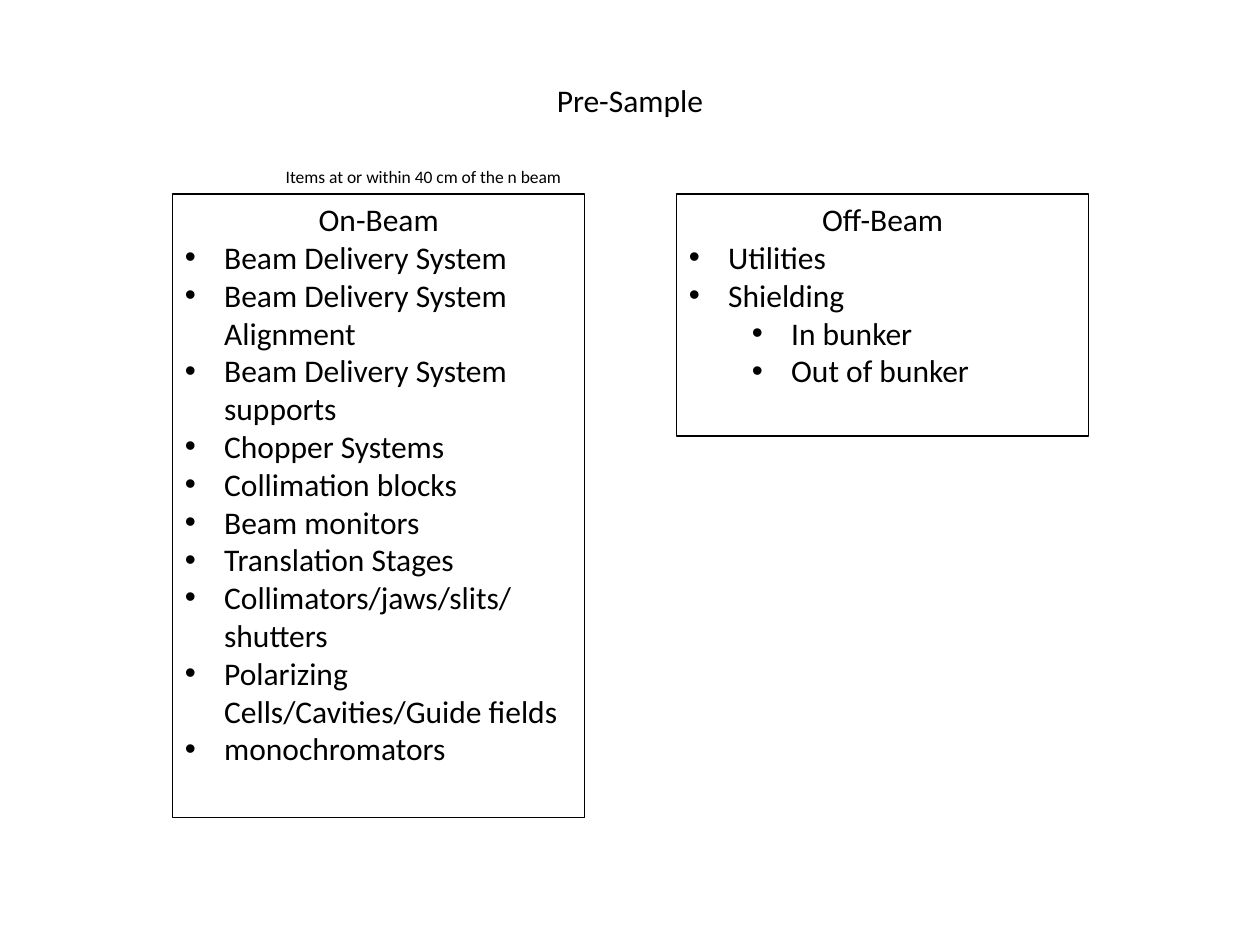
from lxml import etree
from pptx import Presentation
from pptx import util as u
from pptx.dml.color import RGBColor
from pptx.enum import shapes, text
from pptx.oxml.ns import qn

FONT = "Calibri"
BLACK = "000000"
PANEL_TOP, PANEL_WIDTH = 3.91, 8.31
HANGING, LEVEL_STEP = 0.79, 1.27

ON_BEAM = [
    ("Beam Delivery System", 0),
    ("Beam Delivery System Alignment", 0),
    ("Beam Delivery System supports", 0),
    ("Chopper Systems", 0),
    ("Collimation blocks", 0),
    ("Beam monitors", 0),
    ("Translation Stages", 0),
    ("Collimators/jaws/slits/shutters", 0),
    ("Polarizing Cells/Cavities/Guide fields", 0),
    ("monochromators", 0),
]
OFF_BEAM = [
    ("Utilities", 0),
    ("Shielding", 0),
    ("In bunker", 1),
    ("Out of bunker", 1),
]


def color(value):
    return RGBColor.from_string(value)


def set_attrs(obj, values):
    for name, value in values.items():
        setattr(obj, name, value)


def write(p, words, size=18, align=text.PP_ALIGN.LEFT):
    p.alignment = align
    r = p.add_run()
    r.text = words
    set_attrs(r.font, {"name": FONT, "size": u.Pt(size)})
    r.font.color.rgb = color(BLACK)


def add_bullet(p, level):
    p.level = level
    pPr = p._p.get_or_add_pPr()
    pPr.set("marL", str(u.Cm(HANGING + level * LEVEL_STEP)))
    pPr.set("indent", str(-u.Cm(HANGING)))
    etree.SubElement(pPr, qn("a:buFont")).set("typeface", "Arial")
    etree.SubElement(pPr, qn("a:buChar")).set("char", "•")


def add_label(slide, box, words, size, align, wrap):
    tf = slide.shapes.add_textbox(*map(u.Cm, box)).text_frame
    tf.word_wrap = wrap
    write(tf.paragraphs[0], words, size, align)


def add_panel(slide, left, height, heading, items):
    box = (left, PANEL_TOP, PANEL_WIDTH, height)
    sp = slide.shapes.add_shape(shapes.MSO_SHAPE.RECTANGLE, *map(u.Cm, box))
    sp.shadow.inherit = False
    sp.fill.background()
    sp.line.color.rgb = color(BLACK)
    sp.line.width = u.Pt(0.75)
    tf = sp.text_frame
    set_attrs(tf, {"word_wrap": True, "vertical_anchor": text.MSO_ANCHOR.TOP})
    write(tf.paragraphs[0], heading, align=text.PP_ALIGN.CENTER)
    for words, level in items:
        p = tf.add_paragraph()
        write(p, words)
        add_bullet(p, level)


def main():
    prs = Presentation()
    set_attrs(prs, {"slide_width": u.Cm(25.4), "slide_height": u.Cm(19.05)})
    slide = prs.slides.add_slide(prs.slide_layouts[6])

    # Title
    add_label(slide, (10.95, 1.5, 3.5, 1.02), "Pre-Sample", 18,
              text.PP_ALIGN.CENTER, False)

    # Component lists
    add_panel(slide, 3.48, 12.57, "On-Beam", ON_BEAM)
    add_panel(slide, 13.64, 4.88, "Off-Beam", OFF_BEAM)

    # Note above the on-beam list
    add_label(slide, (5.51, 3.23, 6.27, 0.69),
              "Items at or within 40 cm of the n beam", 10,
              text.PP_ALIGN.LEFT, True)

    prs.save("out.pptx")


if __name__ == "__main__":
    main()
